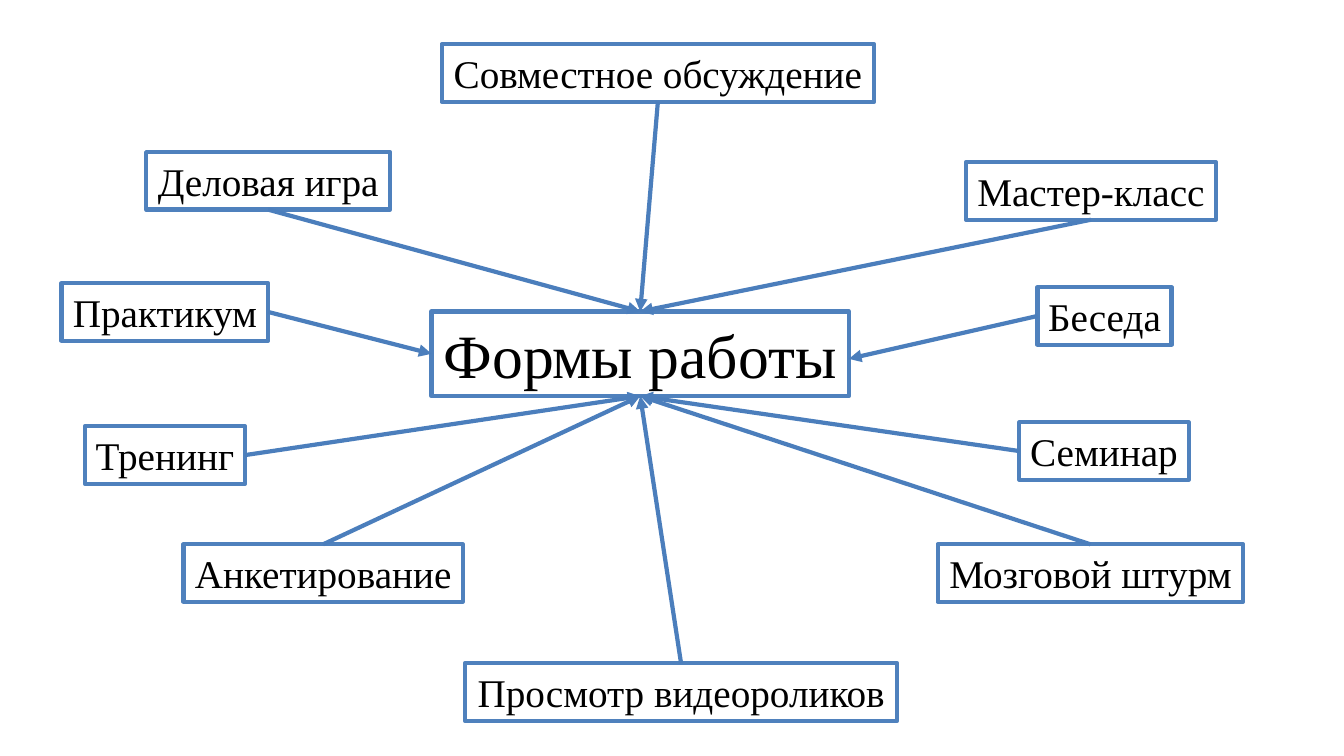
from pptx import Presentation
from pptx.dml.color import RGBColor
from pptx.enum.shapes import MSO_CONNECTOR
from pptx.enum.text import MSO_ANCHOR, MSO_AUTO_SIZE, PP_ALIGN
from pptx.oxml.ns import qn
from pptx.util import Inches, Pt
from lxml import etree

STRAIGHT = MSO_CONNECTOR.STRAIGHT
CENTER = PP_ALIGN.CENTER
GROW = MSO_AUTO_SIZE.SHAPE_TO_FIT_TEXT
ANCHOR = MSO_ANCHOR.TOP
TOP, LEFT, BOTTOM, RIGHT = range(4)

FONT = "Times New Roman"
COLORS = {"text": "000000", "frame": "4F81BD", "arrow": "4B7EBC"}

HUB = ("Формы работы", 4.28, 3.09, 4.14)
FORMS = [
    ("Деловая игра", 1.45, 1.51, 2.42, BOTTOM, TOP),
    ("Совместное обсуждение", 4.38, 0.44, 4.29, BOTTOM, TOP),
    ("Мастер-класс", 9.58, 1.61, 2.48, BOTTOM, TOP),
    ("Практикум", 0.61, 2.81, 2.05, RIGHT, LEFT),
    ("Беседа", 10.29, 2.85, 1.33, LEFT, None),
    ("Тренинг", 0.84, 4.23, 1.59, RIGHT, BOTTOM),
    ("Семинар", 10.11, 4.19, 1.68, LEFT, BOTTOM),
    ("Анкетирование", 1.82, 5.4, 2.77, TOP, BOTTOM),
    ("Мозговой штурм", 9.3, 5.4, 3.03, TOP, BOTTOM),
    ("Просмотр видеороликов", 4.61, 6.58, 4.29, TOP, BOTTOM),
]


def color(name):
    return RGBColor.from_string(COLORS[name])


def set_line(line, name):
    line.color.rgb = color(name)
    line.width = Pt(3)


def add_box(slide, text, left, top, width, height=0.57, size=28):
    box = slide.shapes.add_textbox(
        Inches(left), Inches(top), Inches(width), Inches(height))
    set_line(box.line, "frame")
    frame = box.text_frame
    frame.word_wrap = False
    frame.auto_size = GROW
    frame.vertical_anchor = ANCHOR
    para = frame.paragraphs[0]
    para.text = text
    para.alignment = CENTER
    para.font.name = FONT
    para.font.size = Pt(size)
    para.font.color.rgb = color("text")
    return box


def add_arrow(slide, start, side, hub, goal):
    arrow = slide.shapes.add_connector(
        STRAIGHT, start.left, start.top, Inches(8.42), Inches(3.56))
    arrow.begin_connect(start, side)
    if goal is not None:
        arrow.end_connect(hub, goal)
    set_line(arrow.line, "arrow")
    props = arrow.line._get_or_add_ln()
    etree.SubElement(props, qn("a:tailEnd"), type="triangle")
    etree.SubElement(arrow._element.spPr, qn("a:effectLst"))


def main():
    deck = Presentation()
    deck.slide_width = Inches(13.33)
    deck.slide_height = Inches(7.5)
    slide = deck.slides.add_slide(deck.slide_layouts[6])
    hub = add_box(slide, *HUB, height=0.84, size=44)
    for text, left, top, width, side, goal in FORMS:
        box = add_box(slide, text, left, top, width)
        add_arrow(slide, box, side, hub, goal)
    deck.save("out.pptx")


if __name__ == "__main__":
    main()
